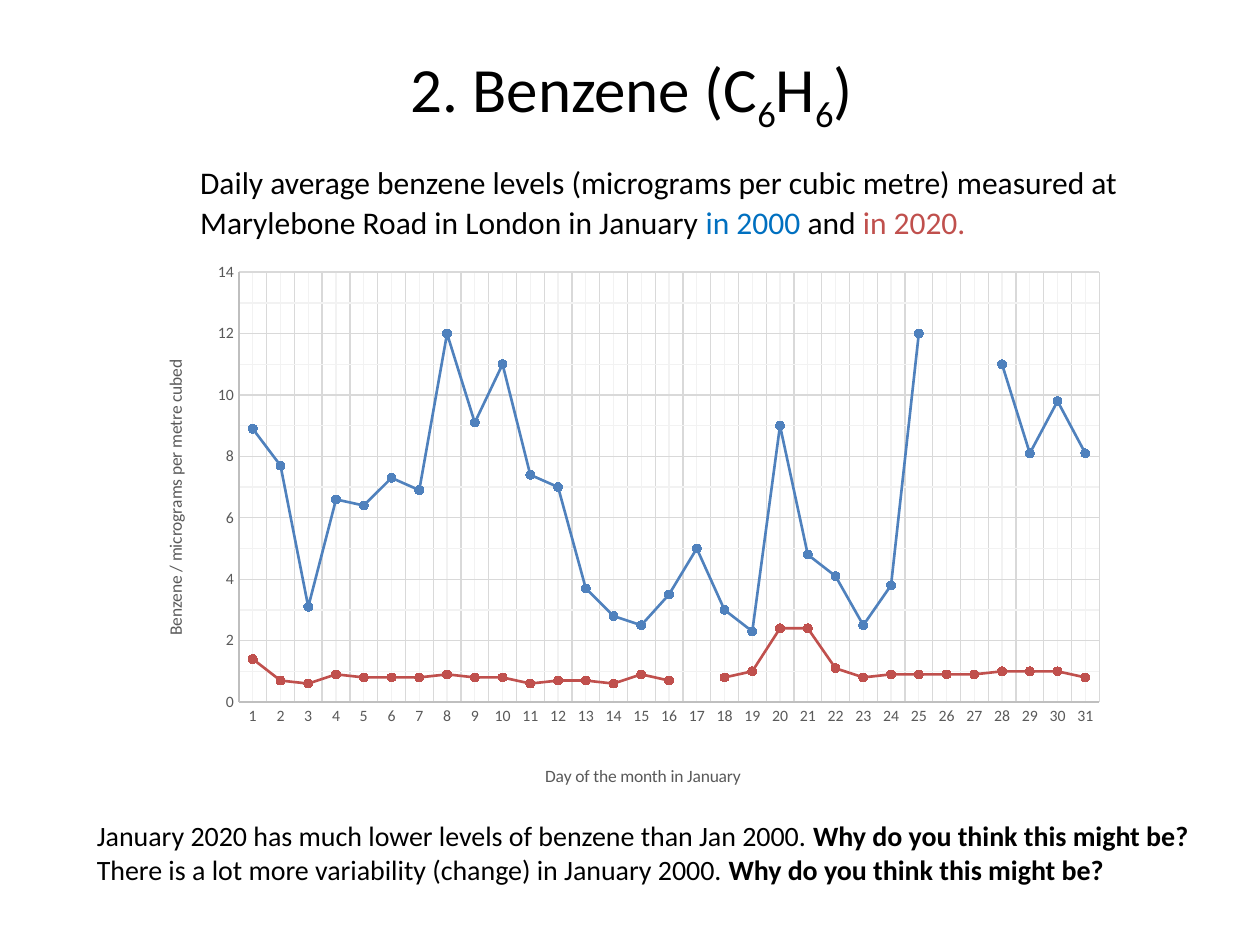
from lxml import etree
from pptx import Presentation
from pptx.chart.data import CategoryChartData
from pptx.dml.color import RGBColor
from pptx.enum.chart import XL_CHART_TYPE, XL_MARKER_STYLE, XL_TICK_MARK
from pptx.enum.text import MSO_AUTO_SIZE, PP_ALIGN
from pptx.oxml.ns import qn
from pptx.util import Pt

LINE_MARKERS = XL_CHART_TYPE.LINE_MARKERS
CIRCLE = XL_MARKER_STYLE.CIRCLE
NO_TICK = XL_TICK_MARK.NONE
FIT_SHAPE = MSO_AUTO_SIZE.SHAPE_TO_FIT_TEXT
LEFT, JUSTIFY = PP_ALIGN.LEFT, PP_ALIGN.JUSTIFY

EMU_PER_PX = 9144  # 100 px to the inch
BLACK, GREY = "000000", "595959"
AXIS_LINE, MAJOR_GRID, MINOR_GRID = "BFBFBF", "D9D9D9", "F2F2F2"

LEVELS = {
    "2000": ("4F81BD", [
        8.9, 7.7, 3.1, 6.6, 6.4, 7.3, 6.9, 12, 9.1, 11, 7.4, 7, 3.7, 2.8, 2.5, 3.5,
        5, 3, 2.3, 9, 4.8, 4.1, 2.5, 3.8, 12, None, None, 11, 8.1, 9.8, 8.1]),
    "2020": ("C0504D", [
        1.4, 0.7, 0.6, 0.9, 0.8, 0.8, 0.8, 0.9, 0.8, 0.8, 0.6, 0.7, 0.7, 0.6, 0.9, 0.7,
        None, 0.8, 1, 2.4, 2.4, 1.1, 0.8, 0.9, 0.9, 0.9, 0.9, 1, 1, 1, 0.8]),
}


def px(length):
    return length * EMU_PER_PX


def color(value):
    return RGBColor.from_string(value)


def set_line(line, value, width):
    line.color.rgb = color(value)
    line.width = Pt(width)


def set_layout(parent, index, **settings):
    """Give a chart part a manual layout, in fractions of the chart."""
    for old in parent.findall(qn("c:layout")):
        parent.remove(old)
    layout = etree.Element(qn("c:layout"))
    manual = etree.SubElement(layout, qn("c:manualLayout"))
    for name, value in settings.items():
        etree.SubElement(manual, qn(f"c:{name}")).set("val", str(value))
    parent.insert(index, layout)


class SlideBuilder:
    def __init__(self, slide, font="Calibri"):
        self.slide = slide
        self.font = font

    def style(self, font, size, value, bold=False):
        font.name = self.font
        font.size = Pt(size)
        font.bold = bold
        font.color.rgb = color(value)

    def text(self, box, paragraphs, size, align=LEFT, wrap=True):
        """Add a text box; each run is its text and a dict of style changes."""
        frame = self.slide.shapes.add_textbox(*map(px, box)).text_frame
        frame.word_wrap = wrap
        frame.auto_size = FIT_SHAPE
        for number, runs in enumerate(paragraphs):
            paragraph = frame.add_paragraph() if number else frame.paragraphs[0]
            paragraph.alignment = align
            for words, changes in runs:
                run = paragraph.add_run()
                run.text = words
                self.style(run.font, size, changes.get("color", BLACK),
                           changes.get("bold", False))
                if "baseline" in changes:
                    run._r.get_or_add_rPr().set("baseline", str(changes["baseline"]))
        return frame

    def axis(self, axis, title, x, y, rotation):
        axis.major_tick_mark = axis.minor_tick_mark = NO_TICK
        axis.has_major_gridlines = axis.has_minor_gridlines = True
        set_line(axis.format.line, AXIS_LINE, 0.75)
        set_line(axis.major_gridlines.format.line, MAJOR_GRID, 0.75)
        minor_line = axis._element.find(qn("c:minorGridlines"))
        properties = etree.SubElement(minor_line, qn("c:spPr"))
        line = etree.SubElement(properties, qn("a:ln"), w=str(Pt(0.75)))
        fill = etree.SubElement(line, qn("a:solidFill"))
        etree.SubElement(fill, qn("a:srgbClr"), val=MINOR_GRID)
        self.style(axis.tick_labels.font, 9, GREY)

        frame = axis.axis_title.text_frame
        run = frame.paragraphs[0].add_run()
        run.text = title
        self.style(run.font, 10, GREY)
        frame._txBody.find(qn("a:bodyPr")).set("rot", str(rotation * 60000))
        set_layout(axis.axis_title._element, 1, xMode="edge", yMode="edge", x=x, y=y)

    def line_chart(self, box, categories, levels):
        data = CategoryChartData()
        data.categories = categories
        for name, (_, values) in levels.items():
            data.add_series(name, values)
        chart = self.slide.shapes.add_chart(LINE_MARKERS, *map(px, box), data).chart
        chart.has_title = chart.has_legend = False
        self.style(chart.font, 10, BLACK)
        plot = chart.plots[0]
        plot.vary_by_categories = False
        for series, (value, _) in zip(plot.series, levels.values()):
            series.smooth = False
            set_line(series.format.line, value, 1.5)
            series.marker.style = CIRCLE
            series.marker.size = 5
            series.marker.format.fill.solid()
            series.marker.format.fill.fore_color.rgb = color(value)
            set_line(series.marker.format.line, value, 0.75)
        plot_area = chart._chartSpace.find(".//" + qn("c:plotArea"))
        set_layout(plot_area, 0, layoutTarget="inner", xMode="edge", yMode="edge",
                   x=0.1, y=0.04, w=0.88, h=0.8)
        return chart


def main():
    presentation = Presentation()
    presentation.slide_width, presentation.slide_height = px(1000), px(750)
    builder = SlideBuilder(presentation.slides.add_slide(presentation.slide_layouts[6]))

    intro = builder.text((149, 122, 787, 73), [[
        ("Daily average benzene levels (micrograms per cubic metre) measured at "
         "Marylebone Road in London in January ", {}),
        ("in 2000 ", {"color": "0070C0"}),
        ("and ", {}),
        ("in 2020.", {"color": "C0504D"}),
    ]], 18)
    intro.paragraphs[0].line_spacing = 1.07
    intro.paragraphs[0].space_after = Pt(8)

    days = [str(day) for day in range(1, 32)]
    chart = builder.line_chart((112, 199, 776, 429), days, LEVELS)
    builder.axis(chart.category_axis, "Day of the month in January", 0.41, 0.95, 0)
    builder.axis(chart.value_axis, "Benzene / micrograms per metre cubed", 0.02, 0.2, -90)
    chart.value_axis.minimum_scale, chart.value_axis.maximum_scale = 0, 14
    chart.value_axis.major_unit, chart.value_axis.minor_unit = 2, 1

    question = ("Why do you think this might be?", {"bold": True})
    builder.text((67, 645, 919, 64), [
        [("January 2020 has much lower levels of benzene than Jan 2000. ", {}), question],
        [("There is a lot more variability (change) in January 2000. ", {}), question],
    ], 16, align=JUSTIFY)

    subscript = ("6", {"baseline": -25000})
    builder.text((316, 34, 390, 71), [
        [("2. Benzene (C", {}), subscript, ("H", {}), subscript, (")", {})],
    ], 36, wrap=False)

    presentation.save("out.pptx")


if __name__ == "__main__":
    main()
